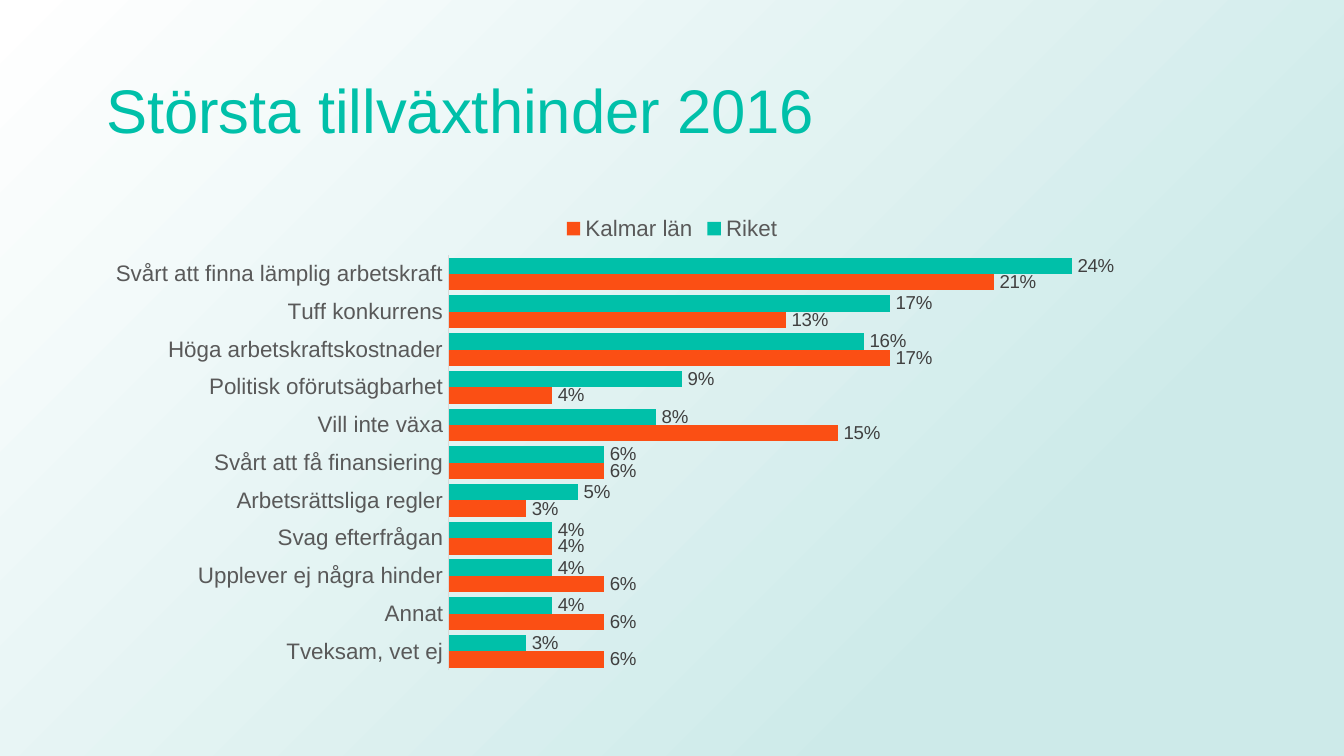
from dataclasses import dataclass

from lxml import etree
from pptx import Presentation
from pptx.chart.data import CategoryChartData
from pptx.dml.color import RGBColor
from pptx.enum.chart import XL_CHART_TYPE, XL_LABEL_POSITION, XL_LEGEND_POSITION, XL_TICK_MARK
from pptx.enum.shapes import MSO_SHAPE
from pptx.enum.text import MSO_ANCHOR, PP_ALIGN
from pptx.oxml import parse_xml
from pptx.oxml.ns import nsdecls, qn
from pptx.util import Cm, Pt

BAR = XL_CHART_TYPE.BAR_CLUSTERED
OUTSIDE = XL_LABEL_POSITION.OUTSIDE_END
TOP = XL_LEGEND_POSITION.TOP
NO_TICK = XL_TICK_MARK.NONE
RECT = MSO_SHAPE.RECTANGLE
MIDDLE = MSO_ANCHOR.MIDDLE
LEFT = PP_ALIGN.LEFT

TITLE_ONLY = 5
SLIDE_W, SLIDE_H = Cm(25.4), Cm(14.29)
MARGIN = Cm(1.75)
CONTENT_W = SLIDE_W - 2 * MARGIN

CATEGORIES = [
    "Svårt att finna lämplig arbetskraft", "Tuff konkurrens",
    "Höga arbetskraftskostnader", "Politisk oförutsägbarhet",
    "Vill inte växa", "Svårt att få finansiering", "Arbetsrättsliga regler",
    "Svag efterfrågan", "Upplever ej några hinder", "Annat", "Tveksam, vet ej",
]
SHARES = {
    "Riket": [0.24, 0.17, 0.16, 0.09, 0.08, 0.06, 0.05, 0.04, 0.04, 0.04, 0.03],
    "Kalmar län": [0.21, 0.13, 0.17, 0.04, 0.15, 0.06, 0.03, 0.04, 0.06, 0.06, 0.06],
}


@dataclass(frozen=True)
class Theme:
    font: str = "Arial"
    teal: str = "00C0A9"
    orange: str = "FB4F14"
    mist: str = "CDEAE9"
    white: str = "FFFFFF"
    axis_text: str = "595959"
    label_text: str = "404040"
    axis_line: str = "D9D9D9"
    title_size: int = 33
    axis_size: int = 12
    label_size: int = 10


class SlideBuilder:
    def __init__(self, prs, theme):
        self.theme = theme
        self.slide = prs.slides.add_slide(prs.slide_layouts[TITLE_ONLY])

    def style_font(self, font, size, color):
        font.name = self.theme.font
        font.size = Pt(size)
        font.color.rgb = RGBColor.from_string(color)

    def background(self):
        """Place a gradient behind everything, spreading from the lower right corner."""
        shapes = self.slide.shapes
        s = shapes.add_shape(RECT, 0, 0, SLIDE_W, SLIDE_H)
        s.shadow.inherit = False
        s.line.fill.background()
        s.fill.gradient()
        colors = (self.theme.mist, self.theme.white)
        for stop, position, color in zip(s.fill.gradient_stops, (0.23, 1), colors):
            stop.position = position
            stop.color.rgb = RGBColor.from_string(color)
        grad = s.element.spPr.find(qn("a:gradFill"))
        grad.replace(grad.find(qn("a:lin")), parse_xml(
            f'<a:path {nsdecls("a")} path="circle">'
            '<a:fillToRect l="100000" t="100000"/></a:path>'))
        shapes.element.insert(2, s.element)

    def title(self, text, top, height):
        s = self.slide.shapes.title
        s.left, s.top, s.width, s.height = MARGIN, top, CONTENT_W, height
        tf = s.text_frame
        tf.text = text
        tf.vertical_anchor = MIDDLE
        p = tf.paragraphs[0]
        p.alignment = LEFT
        p.line_spacing = 0.9
        self.style_font(p.runs[0].font, self.theme.title_size, self.theme.teal)

    def bar_chart(self, categories, series, colors, top, height):
        t = self.theme
        data = CategoryChartData(number_format="0%")
        data.categories = categories
        for name, values in series.items():
            data.add_series(name, values)
        chart = self.slide.shapes.add_chart(BAR, MARGIN, top, CONTENT_W, height, data).chart
        chart.has_title = False
        self.style_font(chart.font, t.label_size, t.label_text)

        chart.has_legend = True
        chart.legend.position = TOP
        chart.legend.include_in_layout = False
        self.style_font(chart.legend.font, t.axis_size, t.axis_text)

        axis = chart.category_axis
        axis.reverse_order = True
        axis.major_tick_mark = axis.minor_tick_mark = NO_TICK
        axis.format.line.color.rgb = RGBColor.from_string(t.axis_line)
        axis.format.line.width = Pt(0.75)
        self.style_font(axis.tick_labels.font, t.axis_size, t.axis_text)

        chart.value_axis.visible = False
        chart.value_axis.has_major_gridlines = False
        chart.value_axis.minimum_scale = 0
        chart.value_axis.maximum_scale = 0.3

        plot = chart.plots[0]
        plot.gap_width = 30
        plot.overlap = 0
        plot.vary_by_categories = False
        for bars, color in zip(plot.series, colors):
            bars.format.fill.solid()
            bars.format.fill.fore_color.rgb = RGBColor.from_string(color)
            labels = bars.data_labels
            labels.show_value = True
            labels.position = OUTSIDE
            labels.number_format = "0%"
            labels.number_format_is_linked = False
            self.style_font(labels.font, t.label_size, t.label_text)


def main():
    prs = Presentation()
    prs.slide_width, prs.slide_height = SLIDE_W, SLIDE_H
    theme = Theme()
    builder = SlideBuilder(prs, theme)
    builder.background()
    builder.title("Största tillväxthinder 2016", Cm(0.76), Cm(2.77))
    builder.bar_chart(CATEGORIES, SHARES, (theme.teal, theme.orange), Cm(3.81), Cm(9.04))
    prs.save("out.pptx")


if __name__ == "__main__":
    main()
